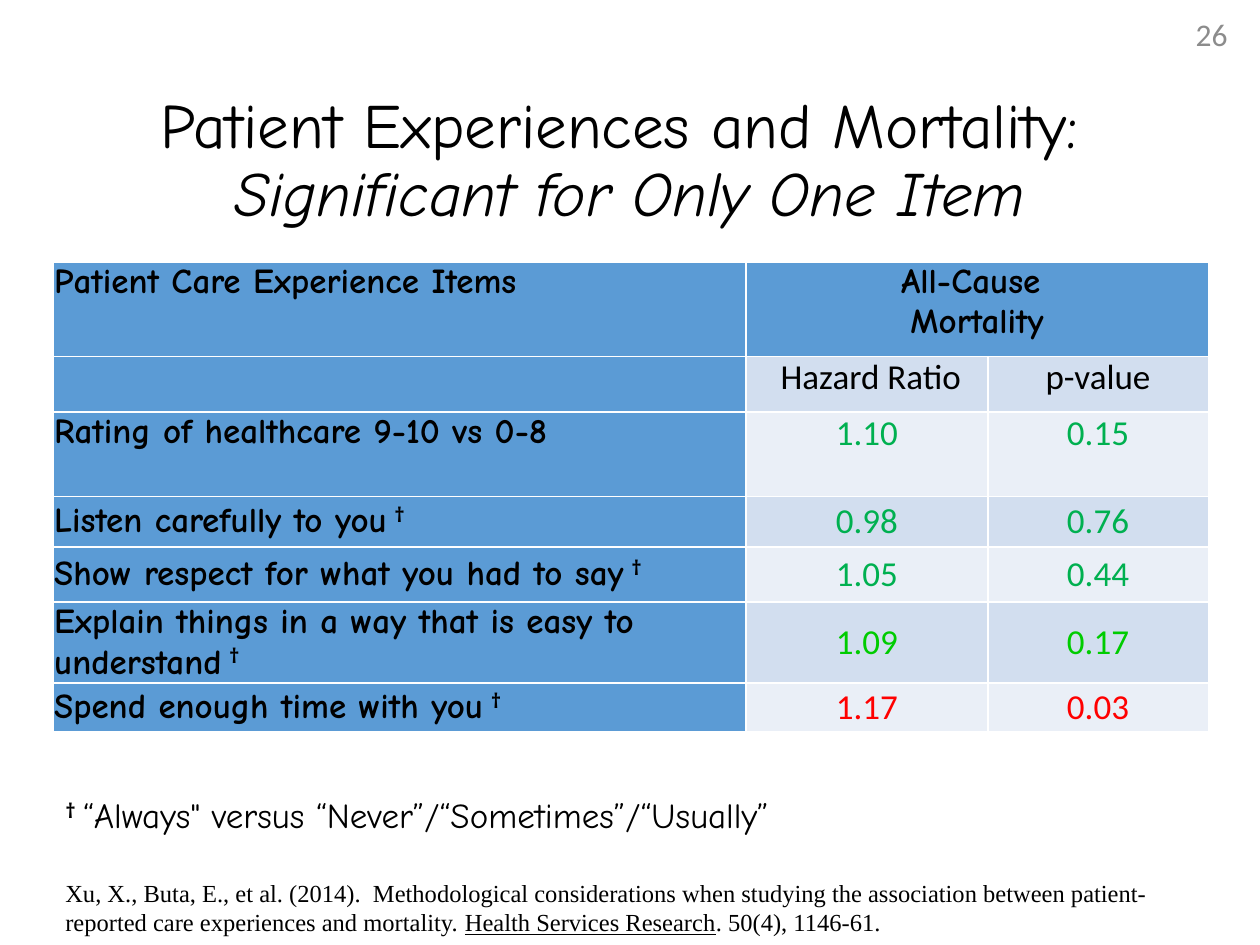
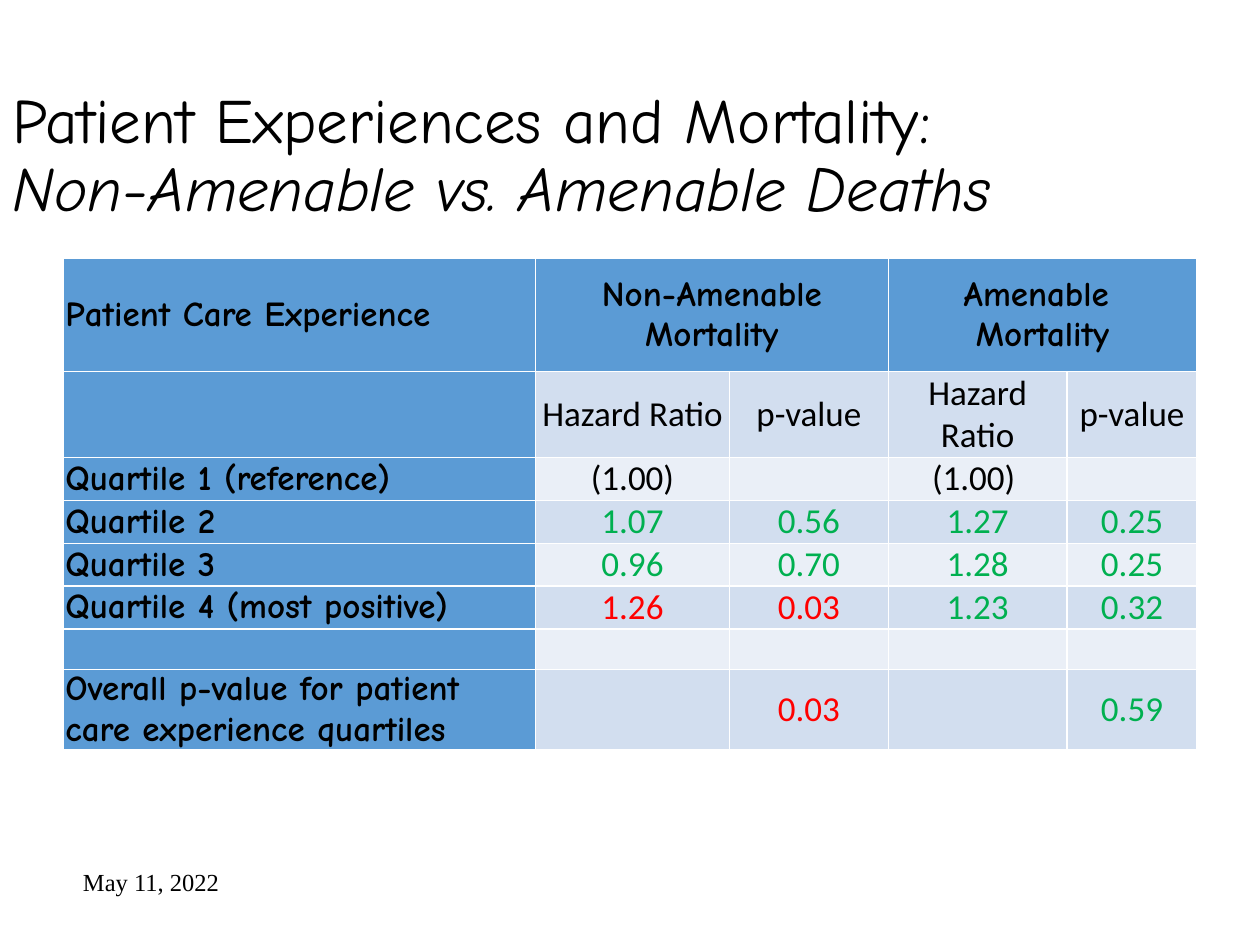
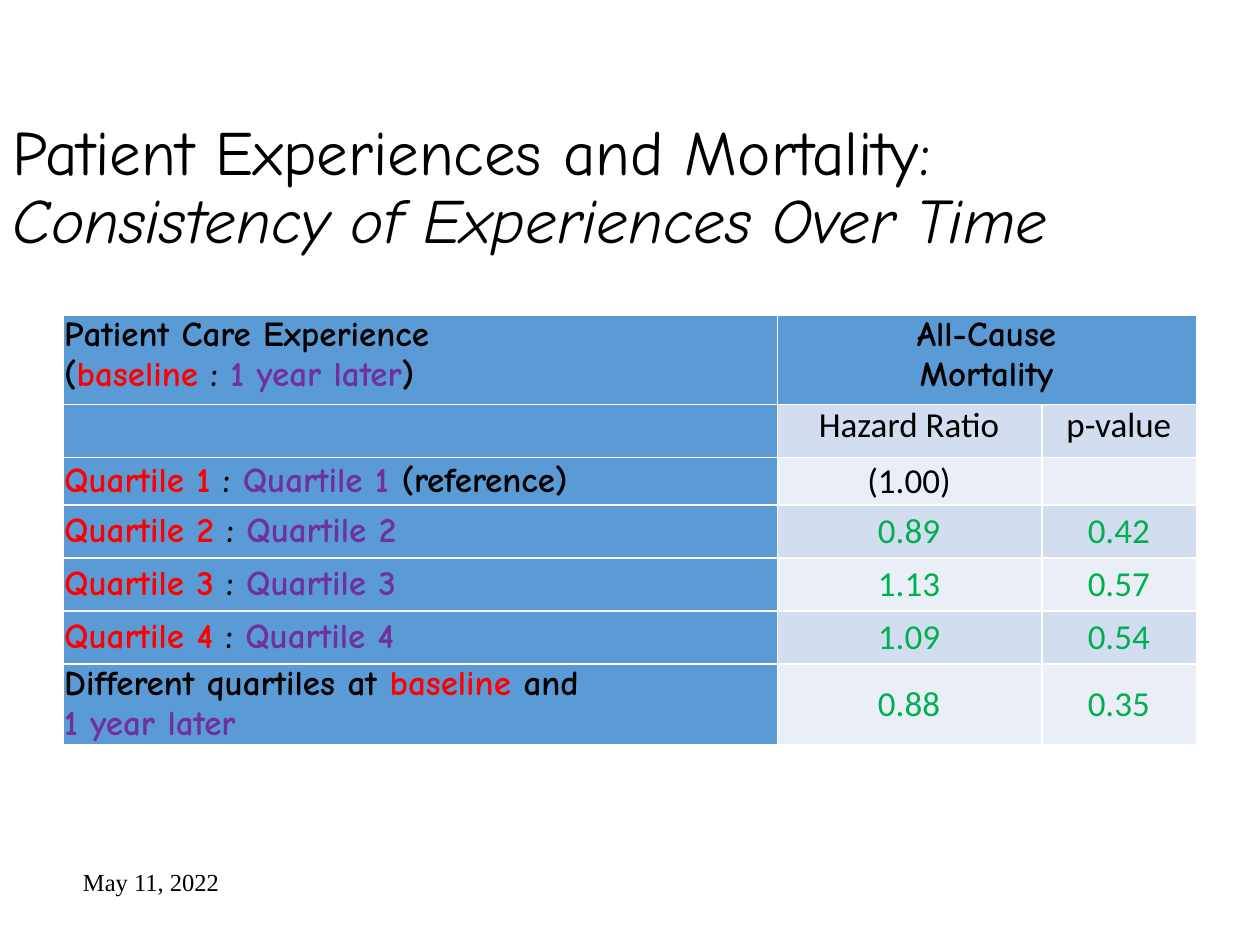
"""Build three slides of hazard-ratio tables on patient experiences and mortality."""
from dataclasses import dataclass, field
from typing import Any, NamedTuple

import pptx
import pptx.dml.color
import pptx.enum.text
import pptx.util

Inches = pptx.util.Inches
Pt = pptx.util.Pt
Align = pptx.enum.text.PP_ALIGN
Anchor = pptx.enum.text.MSO_ANCHOR

BLACK, RED, PURPLE, GREY = "000000", "FF0000", "7030A0", "8C8C8C"
GREEN, BRIGHT_GREEN = "00B050", "00CC00"
BLUE, BANDS = "5B9BD5", ("D2DEEF", "EAEFF7")

TITLE = {"size": Pt(36), "name": "Comic Neue", "bold": False}
LABEL = {"size": Pt(20), "name": "Comic Neue", "bold": True}
VALUE = {"size": Pt(20), "name": "Calibri", "bold": False}
NOTE = {"size": Pt(20), "name": "Comic Neue", "bold": False}
CITATION = {"size": Pt(14), "name": "Times New Roman", "bold": False}
PAGE_NUMBER = {"size": Pt(18), "name": "Calibri", "bold": False}


class Run(NamedTuple):
    text: str
    colour: str = BLACK
    raised: bool = False
    extra: dict[str, Any] = {}


Lines = list[list[Run]]


class Box(NamedTuple):
    left: float
    top: float
    width: float
    height: float

    def lengths(self) -> list[int]:
        return [Inches(value) for value in self]


class Result(NamedTuple):
    label: Lines
    estimates: list[tuple[str, str]]
    good_colour: str = GREEN


@dataclass
class MortalitySlide:
    title: str
    subtitle: str
    title_height: float
    table_box: Box
    columns: list[float]
    rows: list[float]
    corner: Lines
    groups: list[Lines]
    measures: list[str]
    results: list[Result]
    margins: tuple[float, float]
    top_rows: int = 0
    title_alignment: Any = Align.LEFT
    notes: list[Any] = field(default_factory=list)


def colour_of(code: str) -> pptx.dml.color.RGBColor:
    """Turn a hex string into a colour."""
    return pptx.dml.color.RGBColor.from_string(code)


def add_run(paragraph: Any, run: Run, style: dict[str, Any]) -> None:
    """Append one formatted run to a paragraph."""
    text_run = paragraph.add_run()
    text_run.text = run.text
    for name, value in {**style, **run.extra}.items():
        setattr(text_run.font, name, value)
    text_run.font.color.rgb = colour_of(run.colour)
    if run.raised:
        text_run.font._element.set("baseline", "30000")


def write_lines(text_frame: Any, lines: Lines, style: dict[str, Any],
                alignment: Any = Align.LEFT) -> None:
    """Write each list of runs as its own paragraph."""
    for index, runs in enumerate(lines):
        paragraph = text_frame.add_paragraph() if index else text_frame.paragraphs[0]
        paragraph.alignment = alignment
        for run in runs:
            add_run(paragraph, run, style)


def add_text(slide: Any, box: Box, lines: Lines, style: dict[str, Any]) -> Any:
    """Add a wrapping text box and return its frame."""
    text_frame = slide.shapes.add_textbox(*box.lengths()).text_frame
    text_frame.word_wrap = True
    write_lines(text_frame, lines, style)
    return text_frame


def set_title(slide: Any, content: MortalitySlide) -> None:
    """Place the title with its italic second line."""
    shape = slide.shapes.title
    box = Box(0, 0.75, 10, content.title_height)
    for name, value in zip(("left", "top", "width", "height"), box.lengths()):
        setattr(shape, name, value)
    shape.text_frame.auto_size = pptx.enum.text.MSO_AUTO_SIZE.NONE
    shape.text_frame.vertical_anchor = Anchor.MIDDLE
    paragraph = shape.text_frame.paragraphs[0]
    paragraph.alignment = content.title_alignment
    paragraph.line_spacing = 0.9
    add_run(paragraph, Run(content.title), TITLE)
    paragraph.add_line_break()
    add_run(paragraph, Run(content.subtitle), {**TITLE, "italic": True})


def estimate_colour(p_value: str, good_colour: str) -> str:
    """Colour reference values black and significant ones red."""
    if not p_value:
        return BLACK
    return RED if float(p_value) < 0.05 else good_colour


def result_cells(result: Result) -> list[Lines]:
    """List the text of one result row, cell by cell."""
    cells = [result.label]
    for estimate in result.estimates:
        colour = estimate_colour(estimate[1], result.good_colour)
        cells += [[[Run(text, colour)]] if text else [] for text in estimate]
    return cells


def add_results_table(slide: Any, content: MortalitySlide) -> None:
    """Add the table with its merged heads, measures and results."""
    table = slide.shapes.add_table(len(content.rows), len(content.columns),
                                   *content.table_box.lengths()).table
    table.horz_banding = False
    for column, width in zip(table.columns, content.columns):
        column.width = Inches(width)
    for row, height in zip(table.rows, content.rows):
        row.height = Inches(height)

    heads = [content.corner]
    for group in content.groups:
        heads += [group, []]
    measures = [[], *([[Run(text)]] for text in content.measures)]
    grid = [heads, measures, *map(result_cells, content.results)]
    left, right = map(Inches, content.margins)
    for row_index, cells in enumerate(grid):
        for column_index, lines in enumerate(cells):
            cell = table.cell(row_index, column_index)
            is_head = row_index == 0 or column_index == 0
            cell.fill.solid()
            cell.fill.fore_color.rgb = colour_of(
                BLUE if is_head else BANDS[(row_index - 1) % 2])
            anchor = Anchor.TOP if row_index < content.top_rows else Anchor.MIDDLE
            layout = {"margin_left": left, "margin_right": right, "margin_top": 0,
                      "margin_bottom": 0, "vertical_anchor": anchor}
            for name, value in layout.items():
                setattr(cell, name, value)
            write_lines(cell.text_frame, lines, LABEL if is_head else VALUE,
                        Align.CENTER if column_index else Align.LEFT)
    for column_index in range(1, len(content.columns), 2):
        table.cell(0, column_index).merge(table.cell(0, column_index + 1))


def add_notes_and_number(slide: Any) -> None:
    """Add the dagger note, the citation and the page number."""
    note = [Run("† ", raised=True, extra={"bold": True}),
            Run("“Always\" versus “Never”/“Sometimes”/“Usually”")]
    citation = [
        Run("Xu, X., Buta, E., et al. (2014).  Methodological considerations when "
            "studying the association between patient-reported care experiences "
            "and mortality. "),
        Run("Health Services Research", extra={"underline": True}),
        Run(". 50(4), 1146-61."),
    ]
    text_frame = add_text(slide, Box(0.42, 6.25, 9, 1.58), [note], NOTE)
    paragraph = text_frame.add_paragraph()
    paragraph.space_before = Pt(24)
    for run in citation:
        add_run(paragraph, run, CITATION)
    number = add_text(slide, Box(9.39, 0.07, 0.55, 0.4), [[Run("26", GREY)]], PAGE_NUMBER)
    number.vertical_anchor = Anchor.MIDDLE


def add_date(slide: Any) -> None:
    """Add the date at the foot."""
    add_text(slide, Box(0.56, 6.83, 2.62, 0.52), [[Run("May 11, 2022")]], CITATION)


def plain(*lines: str) -> Lines:
    """Make black single-run lines."""
    return [[Run(line)] for line in lines]


def dagger(text: str) -> Lines:
    """Make a label that ends in a raised dagger."""
    return [[Run(text), Run(" †", raised=True)]]


def quartiles(number: int, suffix: str = "") -> Lines:
    """Make a label that pairs one quartile at baseline and a year later."""
    label = f"Quartile {number}"
    runs = [Run(label, RED), Run(" : "), Run(label, PURPLE)]
    return [runs + ([Run(suffix)] if suffix else [])]


HAZARD_AND_P = ["Hazard Ratio", "p-value"]
REFERENCE = ("(1.00)", "")
TITLE_TEXT = "Patient Experiences and Mortality: "

SLIDES = [
    MortalitySlide(
        title=TITLE_TEXT,
        subtitle="Significant for Only One Item",
        title_height=1.08,
        title_alignment=Align.CENTER,
        table_box=Box(0.42, 2.08, 9.17, 3.75),
        columns=[5.5, 1.92, 1.75],
        rows=[0.75, 0.44, 0.67, 0.4, 0.44, 0.39, 0.39],
        corner=plain("Patient Care Experience Items"),
        groups=[plain("All-Cause ", "Mortality")],
        measures=[" Hazard Ratio", "p-value"],
        results=[
            Result(plain("Rating of healthcare 9-10 vs 0-8"), [("1.10", "0.15")]),
            Result(dagger("Listen carefully to you"), [("0.98", "0.76")]),
            Result(dagger("Show respect for what you had to say"), [("1.05", "0.44")]),
            Result(dagger("Explain things in a way that is easy to understand"),
                   [("1.09", "0.17")], BRIGHT_GREEN),
            Result(dagger("Spend enough time with you"), [("1.17", "0.03")]),
        ],
        margins=(0.01, 0.01),
        top_rows=3,
        notes=[add_notes_and_number],
    ),
    MortalitySlide(
        title=TITLE_TEXT.strip(),
        subtitle="Non-Amenable vs. Amenable Deaths",
        title_height=1,
        table_box=Box(0.5, 2.05, 9, 3.9),
        columns=[3.75, 1.54, 1.26, 1.42, 1.03],
        rows=[0.9, 0.64] + [0.32] * 5 + [0.64],
        corner=plain("Patient Care Experience"),
        groups=[plain("Non-Amenable Mortality"), plain("Amenable ", "Mortality")],
        measures=HAZARD_AND_P * 2,
        results=[
            Result(plain("Quartile 1 (reference)"), [REFERENCE, ("(1.00) ", "")]),
            Result(plain("Quartile 2"), [("1.07", "0.56"), ("1.27", "0.25")]),
            Result(plain("Quartile 3"), [("0.96", "0.70"), ("1.28", "0.25")]),
            Result(plain("Quartile 4 (most positive)"),
                   [("1.26", "0.03"), ("1.23", "0.32")]),
            Result([], [("", ""), ("", "")]),
            Result(plain("Overall p-value for patient care experience quartiles"),
                   [("", "0.03"), ("", "0.59")]),
        ],
        margins=(0.02, 0.02),
        notes=[add_date],
    ),
    MortalitySlide(
        title=TITLE_TEXT,
        subtitle="Consistency of Experiences Over Time",
        title_height=1.5,
        table_box=Box(0.5, 2.5, 9, 3.44),
        columns=[5.67, 2.1, 1.23],
        rows=[0.71, 0.42, 0.38, 0.42, 0.42, 0.42, 0.43],
        corner=[[Run("Patient Care Experience")],
                [Run("("), Run("baseline", RED), Run(" : "),
                 Run("1 year later", PURPLE), Run(")")]],
        groups=[plain("All-Cause", "Mortality")],
        measures=HAZARD_AND_P,
        results=[
            Result(quartiles(1, " (reference)"), [REFERENCE]),
            Result(quartiles(2), [("0.89", "0.42")]),
            Result(quartiles(3), [("1.13", "0.57")]),
            Result(quartiles(4), [("1.09", "0.54")]),
            Result([[Run("Different quartiles at "), Run("baseline", RED), Run(" and")],
                    [Run("1 year later", PURPLE)]], [("0.88", "0.35")]),
        ],
        margins=(0.01, 0.02),
        top_rows=2,
        notes=[add_date],
    ),
]


def main() -> None:
    """Build and save the presentation."""
    presentation = pptx.Presentation()
    presentation.slide_width, presentation.slide_height = Inches(10), Inches(7.5)
    title_only = presentation.slide_layouts.get_by_name("Title Only")
    for content in SLIDES:
        slide = presentation.slides.add_slide(title_only)
        set_title(slide, content)
        add_results_table(slide, content)
        for add_note in content.notes:
            add_note(slide)
    presentation.save("out.pptx")


if __name__ == "__main__":
    main()
